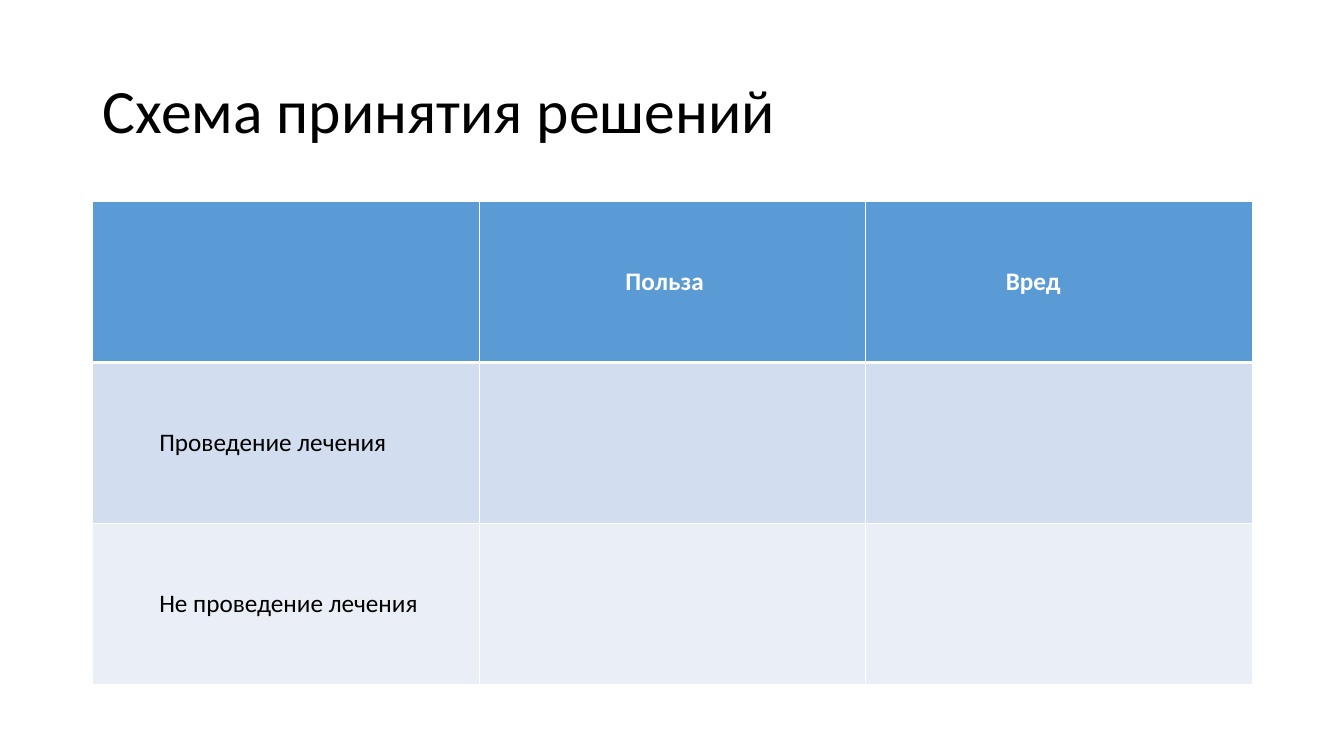
from lxml import etree
from pptx import Presentation
from pptx import util as u
from pptx.dml.color import RGBColor
from pptx.enum import text
from pptx.oxml.ns import qn

COLORS = {"ink": "000000", "white": "FFFFFF", "header": "5B9BD5",
          "treated": "D2DEEF", "untreated": "EAEFF7"}
WIDTH, HEIGHT = 13.33, 7.5
TITLE_BOX = (0.92, 0.4, 11.5, 1.45)
TABLE_BOX = (0.92, 2, 11.5, 4.79)
ROWS = [
    ("header", ["", "Польза", "Вред"]),
    ("treated", ["Проведение лечения", "", ""]),
    ("untreated", ["Не проведение лечения", "", ""]),
]
INDENTS = [0.66, 1.45, 1.39]


def color(name):
    return RGBColor.from_string(COLORS[name])


def apply(target, values):
    for name, value in values.items():
        setattr(target, name, value)


def write(para, words, ink, **font):
    span = para.add_run()
    span.text = words
    apply(span.font, {"name": "Calibri", **font})
    span.font.color.rgb = color(ink)


def border_cell(cell, widths):
    properties = cell._tc.get_or_add_tcPr()
    for index, (side, width) in enumerate(widths.items()):
        line = etree.Element(qn(f"a:ln{side}"), w=str(u.Pt(width)))
        fill = etree.SubElement(line, qn("a:solidFill"))
        etree.SubElement(fill, qn("a:srgbClr"), val=COLORS["white"])
        properties.insert(index, line)


def add_title(page, box, words):
    title = page.shapes.title
    apply(title, dict(zip(("left", "top", "width", "height"), map(u.Inches, box))))
    apply(title.text_frame, {"vertical_anchor": text.MSO_ANCHOR.MIDDLE,
                             "word_wrap": True})
    para = title.text_frame.paragraphs[0]
    apply(para, {"alignment": text.PP_ALIGN.LEFT, "line_spacing": 0.9})
    write(para, words, "ink", size=u.Pt(44))


def add_decision_table(page, box):
    table = page.shapes.add_table(len(ROWS), len(INDENTS), *map(u.Inches, box)).table
    for row_index, (fill, labels) in enumerate(ROWS):
        header = row_index == 0
        top = 3 if row_index == 1 else 1
        bottom = 3 if header else 1
        for column, label in enumerate(labels):
            cell = table.cell(row_index, column)
            apply(cell, {"vertical_anchor": text.MSO_ANCHOR.MIDDLE,
                         "margin_left": u.Inches(INDENTS[column])})
            cell.fill.solid()
            cell.fill.fore_color.rgb = color(fill)
            border_cell(cell, {"L": 1, "R": 1, "T": top, "B": bottom})
            if label:
                write(cell.text_frame.paragraphs[0], label,
                      "white" if header else "ink", size=u.Pt(18), bold=header)


def main():
    deck = Presentation()
    apply(deck, {"slide_width": u.Inches(WIDTH), "slide_height": u.Inches(HEIGHT)})
    page = deck.slides.add_slide(deck.slide_layouts.get_by_name("Title Only"))
    add_title(page, TITLE_BOX, "Схема принятия решений")
    add_decision_table(page, TABLE_BOX)
    deck.save("out.pptx")


if __name__ == "__main__":
    main()
